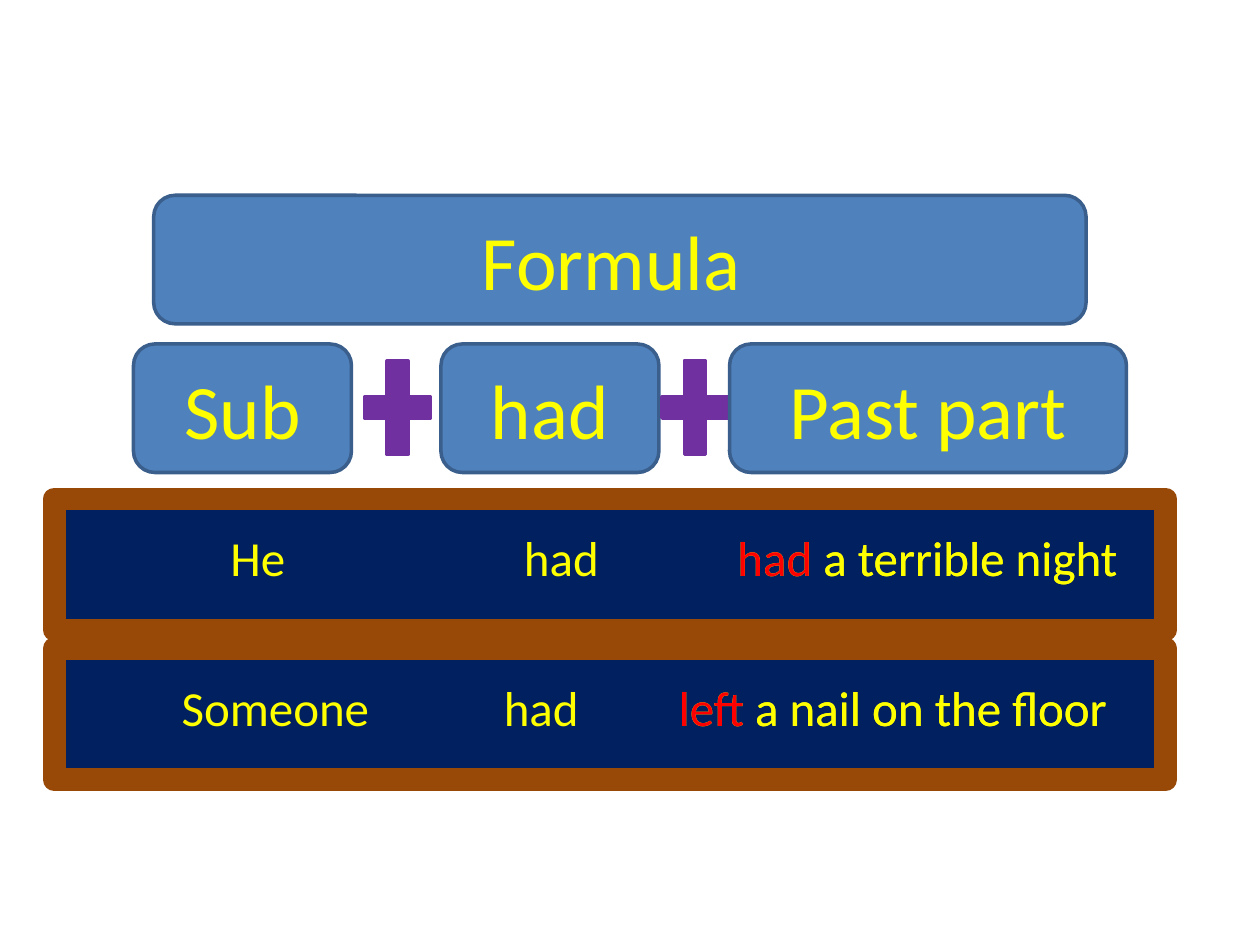
from pptx import Presentation
from pptx.dml.color import RGBColor
from pptx.enum.shapes import MSO_SHAPE
from pptx.enum.text import MSO_ANCHOR, PP_ALIGN
from pptx.util import Inches, Pt

ROUNDED = MSO_SHAPE.ROUNDED_RECTANGLE
PLUS = MSO_SHAPE.MATH_PLUS
RECTANGLE = MSO_SHAPE.RECTANGLE
MIDDLE = MSO_ANCHOR.MIDDLE
CENTER = PP_ALIGN.CENTER

YELLOW, RED = "FFFF00", "FF0000"
BLUE, BLUE_EDGE = "4F81BD", "3A5F8C"
PURPLE, NAVY, BROWN = "7030A0", "002060", "984807"
BOX_HEIGHT = 1.02


def rgb(color):
    return RGBColor.from_string(color)


def write(shape, runs, size):
    """Fill a shape with one centred line of (text, colour) runs."""
    tf = shape.text_frame
    tf.word_wrap = True
    tf.vertical_anchor = MIDDLE
    p = tf.paragraphs[0]
    p.alignment = CENTER
    p.font.size = Pt(size)
    p.font.name = "Calibri"
    for text, color in runs:
        r = p.add_run()
        r.text = text
        r.font.color.rgb = rgb(color)


def add_block(slide, kind, left, top, width, height, fill, edge, weight=2):
    sp = slide.shapes.add_shape(kind, Inches(left), Inches(top),
                                Inches(width), Inches(height))
    sp.shadow.inherit = False
    sp.fill.solid()
    sp.fill.fore_color.rgb = rgb(fill)
    sp.line.color.rgb = rgb(edge)
    sp.line.width = Pt(weight)
    return sp


def add_term(slide, text, left, top, width):
    sp = add_block(slide, ROUNDED, left, top, width, BOX_HEIGHT, BLUE, BLUE_EDGE)
    write(sp, [(text, YELLOW)], 44)


def add_phrase(slide, runs, left, top, width):
    box = slide.shapes.add_textbox(Inches(left), Inches(top),
                                   Inches(width), Inches(BOX_HEIGHT))
    write(box, runs, 28)


def add_formula(slide, left, top):
    """Heading above the three terms, joined by plus signs."""
    add_term(slide, "Formula ", left + 0.16, top, 7.4)
    row = top + 1.18
    add_term(slide, "Sub", left, row, 1.73)
    add_block(slide, PLUS, left + 1.74, row, 0.71, 1.01, PURPLE, PURPLE)
    add_term(slide, "had", left + 2.44, row, 1.73)
    add_block(slide, PLUS, left + 4.1, row, 0.71, 1.01, PURPLE, PURPLE)
    add_term(slide, "Past part", left + 4.73, row, 3.15)


def add_example(slide, left, top, parts, participle, rest):
    """Framed sentence; the ending is set in yellow, then highlighted over it."""
    add_block(slide, RECTANGLE, left, top, 8.82, 1.04, NAVY, BROWN, 13)
    text_top = top - 0.05
    *opening, (end_x, end_width) = parts
    for text, x, width in opening:
        add_phrase(slide, [(text, YELLOW)], left + x, text_top, width)
    for color in (YELLOW, RED):
        add_phrase(slide, [(participle, color), (rest, YELLOW)],
                   left + end_x, text_top, end_width)


def main():
    prs = Presentation()
    prs.slide_width, prs.slide_height = Inches(10), Inches(7.5)
    slide = prs.slides.add_slide(prs.slide_layouts[6])

    add_formula(slide, 1.06, 1.55)
    add_example(slide, 0.43, 3.96,
                [("He", 0.79, 1.65), ("had", 3, 2.05), (5.04, 3.78)],
                "had", " a terrible night")
    add_example(slide, 0.43, 5.15,
                [("Someone", 0.79, 1.93), ("had", 2.84, 2.05), (4.41, 4.49)],
                "left ", "a nail on the floor")
    prs.save("out.pptx")


if __name__ == "__main__":
    main()
